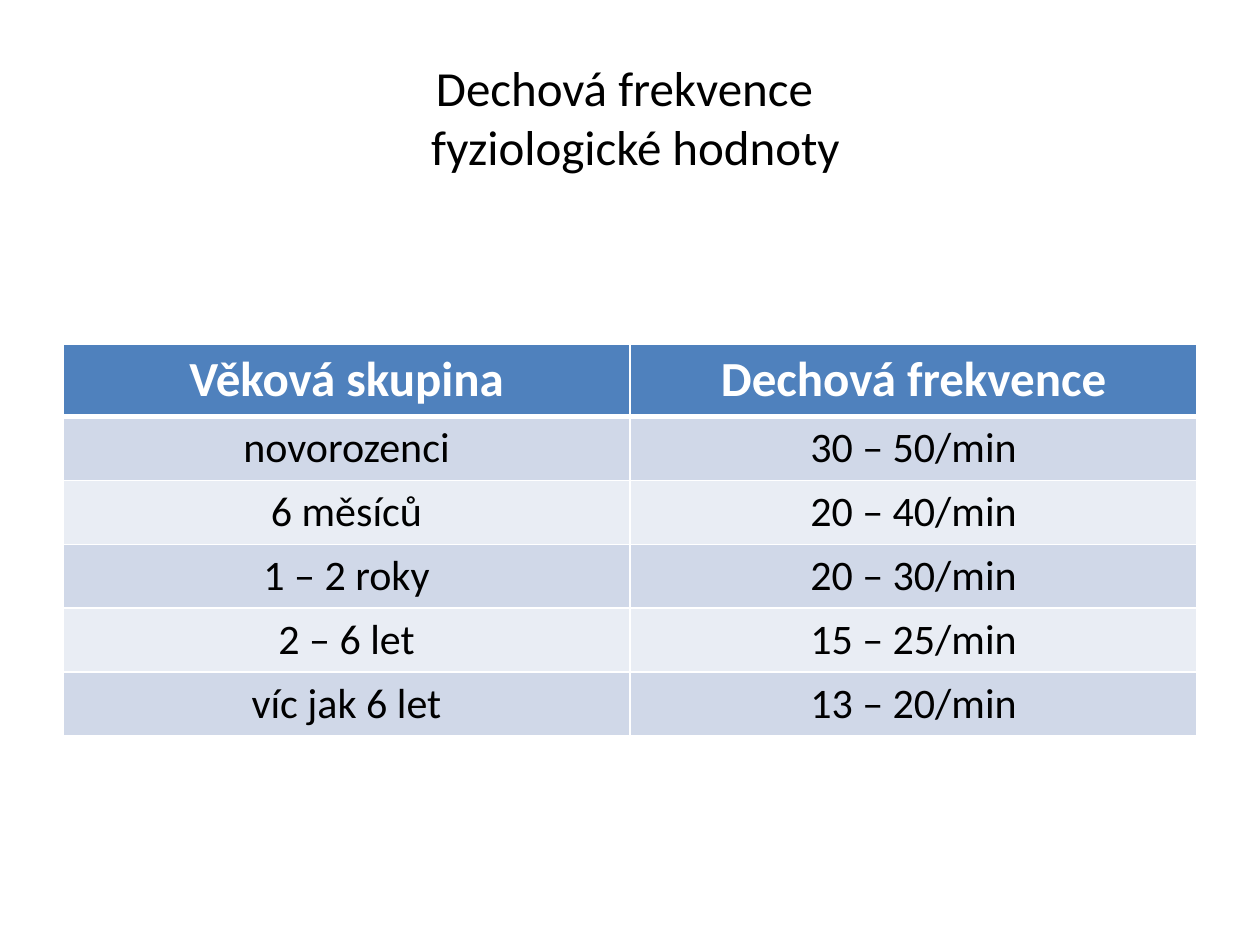
from lxml import etree
from pptx import Presentation
from pptx.dml.color import RGBColor
from pptx.enum.text import MSO_ANCHOR, PP_ALIGN
from pptx.oxml.ns import qn
from pptx.util import Inches, Pt

FONT = "Calibri"
BLACK = RGBColor(0x00, 0x00, 0x00)
WHITE = RGBColor(0xFF, 0xFF, 0xFF)
HEADER_BLUE = RGBColor(0x4F, 0x81, 0xBD)
BANDS = (RGBColor(0xD0, 0xD8, 0xE8), RGBColor(0xE9, 0xED, 0xF4))

TITLE = "Dechová frekvence \v fyziologické hodnoty"
ROWS = [
    ("Věková skupina", "Dechová frekvence"),
    ("novorozenci", "30 – 50/min"),
    ("6 měsíců", "20 – 40/min"),
    ("1 – 2 roky", "20 – 30/min"),
    ("2 – 6 let", "15 – 25/min"),
    ("víc jak 6 let", "13 – 20/min"),
]
HEADER_HEIGHT = Inches(0.57)


def format_paragraph(paragraph, size, color, bold=False):
    paragraph.alignment = PP_ALIGN.CENTER
    font = paragraph.font
    font.name, font.size, font.bold = FONT, Pt(size), bold
    font.color.rgb = color


def set_border(cell, side, width, color):
    """Draw one cell edge; call before the fill is set, as the schema orders it."""
    properties = cell._tc.get_or_add_tcPr()
    line = etree.SubElement(properties, qn(f"a:ln{side}"), w=str(Pt(width)))
    fill = etree.SubElement(line, qn("a:solidFill"))
    etree.SubElement(fill, qn("a:srgbClr"), val=str(color))


def add_title(slide, left, top, width, height):
    title = slide.shapes.title
    title.left, title.top, title.width, title.height = left, top, width, height
    title.text_frame.text = TITLE
    title.text_frame.vertical_anchor = MSO_ANCHOR.MIDDLE
    format_paragraph(title.text_frame.paragraphs[0], 28, BLACK)


def add_rate_table(slide, left, top, width, height):
    frame = slide.shapes.add_table(len(ROWS), len(ROWS[0]), left, top, width, height)
    table = frame.table

    # Taller header, equal body rows
    body_height = (height - HEADER_HEIGHT) // (len(ROWS) - 1)
    for index, row in enumerate(table.rows):
        row.height = body_height if index else HEADER_HEIGHT

    # Cells
    for row_index, texts in enumerate(ROWS):
        is_header = row_index == 0
        for column_index, text in enumerate(texts):
            cell = table.cell(row_index, column_index)
            cell.text = text
            format_paragraph(cell.text_frame.paragraphs[0], 28 if is_header else 24,
                             WHITE if is_header else BLACK, is_header)
            for side in "LRTB":
                touches_rule = (row_index, side) in ((0, "B"), (1, "T"))
                set_border(cell, side, 3 if touches_rule else 1, WHITE)
            cell.fill.solid()
            cell.fill.fore_color.rgb = (
                HEADER_BLUE if is_header else BANDS[(row_index - 1) % 2])


def main():
    presentation = Presentation()
    presentation.slide_width, presentation.slide_height = Inches(10), Inches(7.5)
    slide = presentation.slides.add_slide(presentation.slide_layouts[5])
    add_title(slide, Inches(0.5), Inches(0.3), Inches(9), Inches(1.25))
    add_rate_table(slide, Inches(0.5), Inches(2.73), Inches(9), Inches(3.07))
    presentation.save("out.pptx")


if __name__ == "__main__":
    main()
